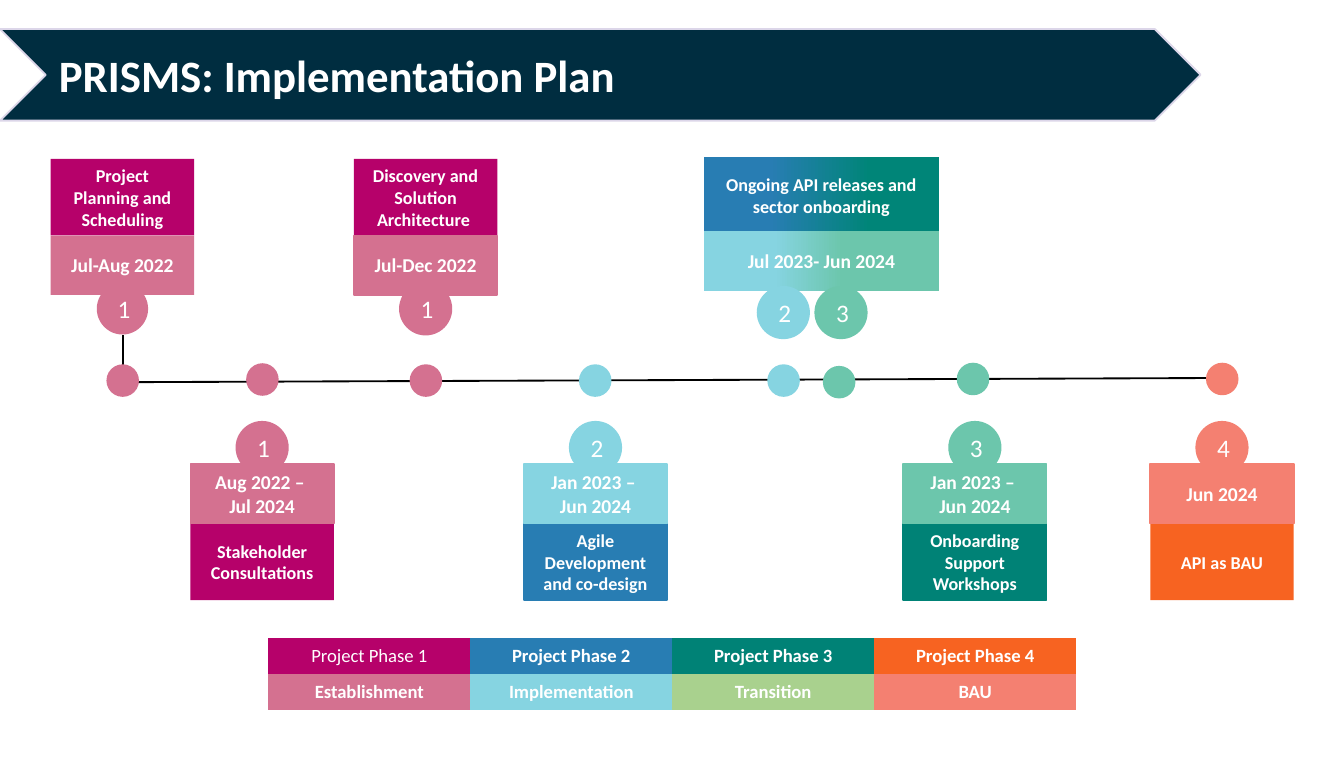
"""Build the PRISMS implementation plan slide: a timeline with phase cards and a phase table."""
from lxml.etree import SubElement
from pptx import Presentation
from pptx.dml.color import RGBColor
from pptx.enum.shapes import MSO_CONNECTOR, MSO_SHAPE
from pptx.enum.text import MSO_ANCHOR, PP_ALIGN
from pptx.oxml.ns import qn
from pptx.util import Cm, Pt

WHITE = RGBColor(0xFF, 0xFF, 0xFF)
BLACK = RGBColor(0x00, 0x00, 0x00)
NAVY = RGBColor(0x00, 0x2D, 0x40)
LILAC = RGBColor(0xDC, 0xD6, 0xE9)
MAGENTA = RGBColor(0xB6, 0x01, 0x6A)
PINK = RGBColor(0xD4, 0x71, 0x90)
BLUE = RGBColor(0x28, 0x7D, 0xB3)
SKY = RGBColor(0x86, 0xD4, 0xE1)
GREEN = RGBColor(0x00, 0x82, 0x76)
DEEP_GREEN = RGBColor(0x00, 0x85, 0x78)
MINT = RGBColor(0x6C, 0xC6, 0xAC)
LIME = RGBColor(0xA9, 0xD1, 0x8E)
ORANGE = RGBColor(0xF7, 0x63, 0x21)
CORAL = RGBColor(0xF4, 0x80, 0x71)

CARD_WIDTH, TITLE_HEIGHT, DATE_HEIGHT = 2.71, 1.45, 1.12
BADGE, DOT = 0.97, 0.58
BADGE_INSET = (CARD_WIDTH - BADGE) / 2
NO_GRID_STYLE = "{2D5ABB26-0587-4C30-8999-92F81FD0307C}"

deck = Presentation()
deck.slide_width, deck.slide_height = Cm(25.4), Cm(14.3)
page = deck.slides.add_slide(deck.slide_layouts[6])


def style_text(frame, text, size, bold=True, align=PP_ALIGN.CENTER):
    frame.text = text
    frame.word_wrap = True
    for para in frame.paragraphs:
        para.alignment = align
        for span in para.runs:
            span.font.name = "Calibri"
            span.font.size = Pt(size)
            span.font.bold = bold
            span.font.color.rgb = WHITE


def add_block(kind, left, top, width, height, fill, line=None, stops=None):
    box = page.shapes.add_shape(kind, Cm(left), Cm(top), Cm(width), Cm(height))
    box.shadow.inherit = False
    if stops:
        box.fill.gradient()
        box.fill.gradient_angle = 0
        for stop, color, position in zip(box.fill.gradient_stops, fill, stops):
            stop.color.rgb = color
            stop.position = position
    else:
        box.fill.solid()
        box.fill.fore_color.rgb = fill
    if line is None:
        box.line.fill.background()
    else:
        box.line.color.rgb = line
        box.line.width = Pt(1)
    box.text_frame.vertical_anchor = MSO_ANCHOR.MIDDLE
    return box


for x1, y1, x2, y2 in [(2.32, 6.32, 2.32, 6.91), (2.26, 7.22, 23.09, 7.14)]:
    connector = page.shapes.add_connector(
        MSO_CONNECTOR.STRAIGHT, Cm(x1), Cm(y1), Cm(x2), Cm(y2))
    connector.line.color.rgb = BLACK
    connector.line.width = Pt(1)
    SubElement(connector._element.spPr, qn("a:effectLst"))

dots = [
    (2.03, 6.9, PINK), (4.67, 6.88, PINK), (7.76, 6.9, PINK), (10.96, 6.9, SKY),
    (14.52, 6.9, SKY), (15.57, 6.93, MINT), (18.1, 6.87, MINT), (22.81, 6.87, CORAL),
]
for left, top, color in dots:
    add_block(MSO_SHAPE.OVAL, left, top, DOT, DOT, color, color)

upper_tops = (3, 4.45, 5.35)
lower_tops = (9.89, 8.77, 7.97)
cards = [
    (0.96, upper_tops, "Project Planning and Scheduling", "Jul-Aug 2022", "1",
     MAGENTA, PINK, None, None),
    (6.69, upper_tops, "Discovery and Solution Architecture ", "Jul-Dec 2022", "1",
     MAGENTA, PINK, None, PINK),
    (3.6, lower_tops, "Stakeholder Consultations", "Aug 2022 – \vJul 2024", "1",
     MAGENTA, PINK, None, PINK),
    (9.9, lower_tops, "Agile Development and co-design", "Jan 2023 – \vJun 2024", "2",
     BLUE, SKY, BLUE, SKY),
    (17.07, lower_tops, "Onboarding Support Workshops", "Jan 2023 – \vJun 2024", "3",
     GREEN, MINT, GREEN, MINT),
    (21.74, lower_tops, "API as BAU", "Jun 2024", "4", ORANGE, CORAL, None, CORAL),
]
badges = [(14.32, 5.42, "2", SKY, SKY), (15.41, 5.42, "3", MINT, MINT)]
for left, tops, title, dates, phase, dark, light, title_line, date_line in cards:
    title_top, date_top, badge_top = tops
    box = add_block(MSO_SHAPE.RECTANGLE, left, title_top, CARD_WIDTH, TITLE_HEIGHT,
                    dark, title_line)
    style_text(box.text_frame, title, 9.7)
    box = add_block(MSO_SHAPE.RECTANGLE, left, date_top, CARD_WIDTH, DATE_HEIGHT,
                    light, date_line)
    style_text(box.text_frame, dates, 10.5)
    badges.append((left + BADGE_INSET, badge_top, phase, light, date_line))

box = add_block(MSO_SHAPE.RECTANGLE, 13.3, 2.97, 4.45, TITLE_HEIGHT,
                (BLUE, DEEP_GREEN), stops=(0.28, 0.71))
style_text(box.text_frame, "Ongoing API releases and sector onboarding", 9.7)
box = add_block(MSO_SHAPE.RECTANGLE, 13.3, 4.37, 4.45, DATE_HEIGHT,
                (SKY, MINT), stops=(0.3, 0.59))
style_text(box.text_frame, "Jul 2023- Jun 2024", 10.5)

for left, top, phase, color, line in badges:
    box = add_block(MSO_SHAPE.OVAL, left, top, BADGE, BADGE, color, line)
    style_text(box.text_frame, phase, 13.5, bold=False)

phases = [
    ("Project Phase 1", MAGENTA, "Establishment", PINK),
    ("Project Phase 2", BLUE, "Implementation", SKY),
    ("Project Phase 3", GREEN, "Transition", LIME),
    ("Project Phase 4", ORANGE, "BAU", CORAL),
]
table = page.shapes.add_table(2, 4, Cm(5.07), Cm(12.05), Cm(15.27), Cm(1.36)).table
table._tbl.tblPr.find(qn("a:tableStyleId")).text = NO_GRID_STYLE
table.first_row = table.horz_banding = False
for column, (name, dark, stage, light) in enumerate(phases):
    for row, (text, color) in enumerate([(name, dark), (stage, light)]):
        cell = table.cell(row, column)
        cell.fill.solid()
        cell.fill.fore_color.rgb = color
        style_text(cell.text_frame, text, 10, bold=(row, column) != (0, 0))

banner = add_block(MSO_SHAPE.CHEVRON, 0, 0.55, 22.69, 1.73, NAVY, LILAC)
style_text(banner.text_frame, "PRISMS: Implementation Plan", 24, align=PP_ALIGN.LEFT)

deck.save("out.pptx")
